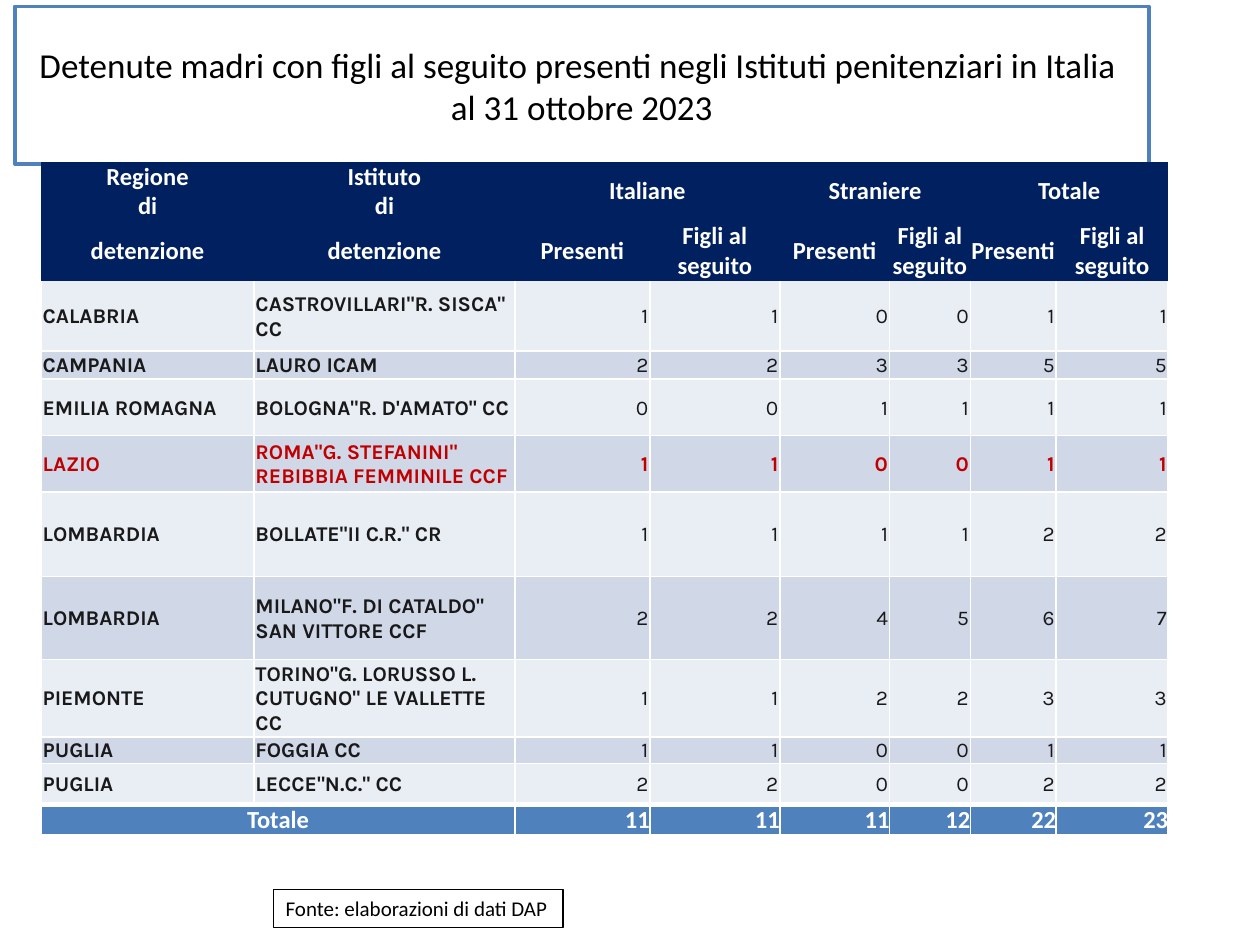
from dataclasses import dataclass
from typing import Optional

import pptx
import pptx.dml.color
import pptx.enum.shapes
import pptx.enum.text
import pptx.oxml
import pptx.oxml.ns
import pptx.util

Cm, Pt = pptx.util.Cm, pptx.util.Pt
ALIGN = pptx.enum.text.PP_ALIGN
MIDDLE = pptx.enum.text.MSO_ANCHOR.MIDDLE

WHITE, BLACK, NAVY, BLUE = "FFFFFF", "000000", "002060", "4F81BD"
INK, RED = "19191A", "C00000"
BANDS = ("E9EDF4", "D0D8E8")


@dataclass(frozen=True)
class TextStyle:
    font: str
    size: int
    color: str
    bold: bool = False
    align: ALIGN = ALIGN.LEFT


@dataclass(frozen=True)
class CellStyle:
    text: TextStyle
    fill: str
    inset: float = 0
    border: Optional[float] = 1
    top_border: Optional[float] = 1


@dataclass(frozen=True)
class Prison:
    region: str
    name: str
    counts: tuple[int, ...]
    highlighted: bool = False


HEADER_ROWS = (
    ("Regione", "Istituto", "Italiane", "", "Straniere", "", "Totale", ""),
    ("di", "di", "", "", "", "", "", ""),
    ("detenzione", "detenzione") + ("Presenti", "Figli al seguito") * 3,
)
PRISONS = (
    Prison("CALABRIA", 'CASTROVILLARI"R. SISCA" CC', (1, 1, 0, 0, 1, 1)),
    Prison("CAMPANIA", "LAURO ICAM", (2, 2, 3, 3, 5, 5)),
    Prison("EMILIA ROMAGNA", 'BOLOGNA"R. D\'AMATO" CC', (0, 0, 1, 1, 1, 1)),
    Prison("LAZIO", 'ROMA"G. STEFANINI" REBIBBIA FEMMINILE CCF', (1, 1, 0, 0, 1, 1), True),
    Prison("LOMBARDIA", 'BOLLATE"II C.R." CR', (1, 1, 1, 1, 2, 2)),
    Prison("LOMBARDIA", 'MILANO"F. DI CATALDO" SAN VITTORE CCF', (2, 2, 4, 5, 6, 7)),
    Prison("PIEMONTE", 'TORINO"G. LORUSSO L. CUTUGNO" LE VALLETTE CC', (1, 1, 2, 2, 3, 3)),
    Prison("PUGLIA", "FOGGIA CC", (1, 1, 0, 0, 1, 1)),
    Prison("PUGLIA", 'LECCE"N.C." CC', (2, 2, 0, 0, 2, 2)),
)
COLUMN_WIDTHS = (4.29, 5.26, 2.72, 2.62, 2.21, 1.63, 1.73, 2.26)
ROW_HEIGHTS = (0.6, 0.6, 1.2, 1.42, 0.56, 1.14, 1.14, 1.7, 1.68, 1.55, 0.52, 0.83, 0.6)


def rgb(color: str) -> pptx.dml.color.RGBColor:
    return pptx.dml.color.RGBColor.from_string(color)


def write(frame, text: str, style: TextStyle) -> None:
    paragraph = frame.paragraphs[0]
    paragraph.text = text
    paragraph.alignment = style.align
    for run in paragraph.runs:
        run.font.name = style.font
        run.font.size = Pt(style.size)
        run.font.bold = style.bold
        run.font.color.rgb = rgb(style.color)


def draw_box(slide, place: tuple[float, ...], line: str, width: float,
             text: str, style: TextStyle):
    box = slide.shapes.add_shape(pptx.enum.shapes.MSO_SHAPE.RECTANGLE, *map(Cm, place))
    box.shadow.inherit = False
    box.fill.solid()
    box.fill.fore_color.rgb = rgb(WHITE)
    box.line.color.rgb = rgb(line)
    box.line.width = Pt(width)
    box.text_frame.word_wrap = True
    box.text_frame.vertical_anchor = MIDDLE
    write(box.text_frame, text, style)
    return box


def set_border(cell, side: str, width: Optional[float]) -> None:
    """Add one white cell edge, or an empty one; must precede the cell fill."""
    if width:
        size = f'w="{Pt(width)}"'
        paint = f'<a:solidFill><a:srgbClr val="{WHITE}"/></a:solidFill>'
    else:
        size, paint = 'w="0"', "<a:noFill/>"
    cell._tc.get_or_add_tcPr().append(pptx.oxml.parse_xml(
        f'<a:{side} {pptx.oxml.ns.nsdecls("a")} {size}>{paint}</a:{side}>'))


def fill_cell(cell, text: str, style: CellStyle, text_style: TextStyle) -> None:
    for side in ("lnL", "lnR", "lnT", "lnB"):
        set_border(cell, side, style.top_border if side == "lnT" else style.border)
    cell.fill.solid()
    cell.fill.fore_color.rgb = rgb(style.fill)
    cell.margin_left = cell.margin_right = cell.margin_top = Cm(style.inset)
    cell.margin_bottom = 0
    cell.vertical_anchor = MIDDLE
    if text:
        write(cell.text_frame, text, text_style)


def fill_row(table, row: int, texts: tuple[str, ...], style: CellStyle,
             number_style: TextStyle) -> None:
    for column, text in enumerate(texts):
        fill_cell(table.cell(row, column), text, style,
                  style.text if column < 2 else number_style)


def draw_table(slide) -> None:
    table = slide.shapes.add_table(
        len(ROW_HEIGHTS), len(COLUMN_WIDTHS), Cm(0.83), Cm(3.26),
        Cm(sum(COLUMN_WIDTHS)), Cm(sum(ROW_HEIGHTS))).table
    table.horz_banding = False
    for column, width in zip(table.columns, COLUMN_WIDTHS):
        column.width = Cm(width)
    for row, height in zip(table.rows, ROW_HEIGHTS):
        row.height = Cm(height)

    # Header: three rows, with group titles over pairs of columns
    heading = TextStyle("Calibri", 14, WHITE, True, ALIGN.CENTER)
    header = CellStyle(heading, NAVY, border=None, top_border=None)
    for row, texts in enumerate(HEADER_ROWS):
        fill_row(table, row, texts, header, heading)
    for column in (2, 4, 6):
        table.cell(0, column).merge(table.cell(1, column + 1))

    # One row for each prison
    first = len(HEADER_ROWS)
    for index, prison in enumerate(PRISONS):
        color = RED if prison.highlighted else INK
        body = CellStyle(TextStyle("Karla", 12, color, True), BANDS[index % 2], 0.03,
                         top_border=1 if index else None)
        number = TextStyle("Karla", 12, color, prison.highlighted, ALIGN.RIGHT)
        fill_row(table, first + index,
                 (prison.region, prison.name, *map(str, prison.counts)), body, number)

    # Totals, summed from the prisons
    last = first + len(PRISONS)
    totals = [str(sum(counts)) for counts in zip(*(p.counts for p in PRISONS))]
    fill_row(table, last, ("Totale", "", *totals),
             CellStyle(heading, BLUE, top_border=3),
             TextStyle("Calibri", 14, WHITE, True, ALIGN.RIGHT))
    table.cell(last, 0).merge(table.cell(last, 1))


def main() -> None:
    deck = pptx.Presentation()
    deck.slide_width, deck.slide_height = Cm(25.4), Cm(19.05)
    slide = deck.slides.add_slide(deck.slide_layouts[6])

    # Title
    draw_box(slide, (0.3, 0.13, 22.86, 3.18), BLUE, 2,
             "Detenute madri con figli al seguito presenti negli Istituti "
             "penitenziari in Italia \val 31 ottobre 2023",
             TextStyle("Calibri", 20, BLACK, align=ALIGN.CENTER))

    # Source note
    note = draw_box(slide, (5.51, 17.93, 5.84, 0.77), BLACK, 0.75,
                    "Fonte: elaborazioni di dati DAP", TextStyle("Calibri", 12, BLACK))
    note.text_frame.word_wrap = False
    note.text_frame.auto_size = pptx.enum.text.MSO_AUTO_SIZE.SHAPE_TO_FIT_TEXT

    draw_table(slide)
    deck.save("out.pptx")


if __name__ == "__main__":
    main()
